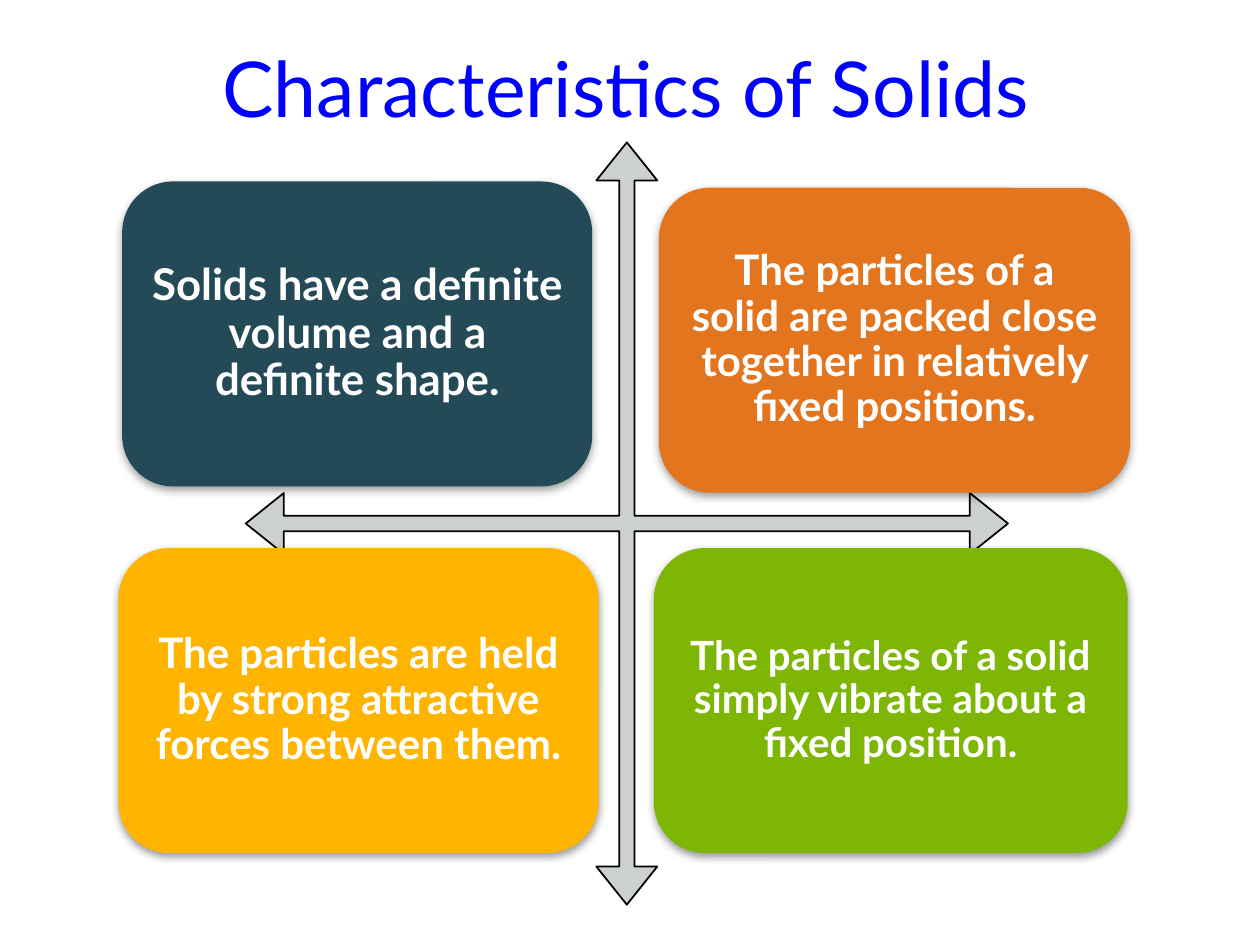
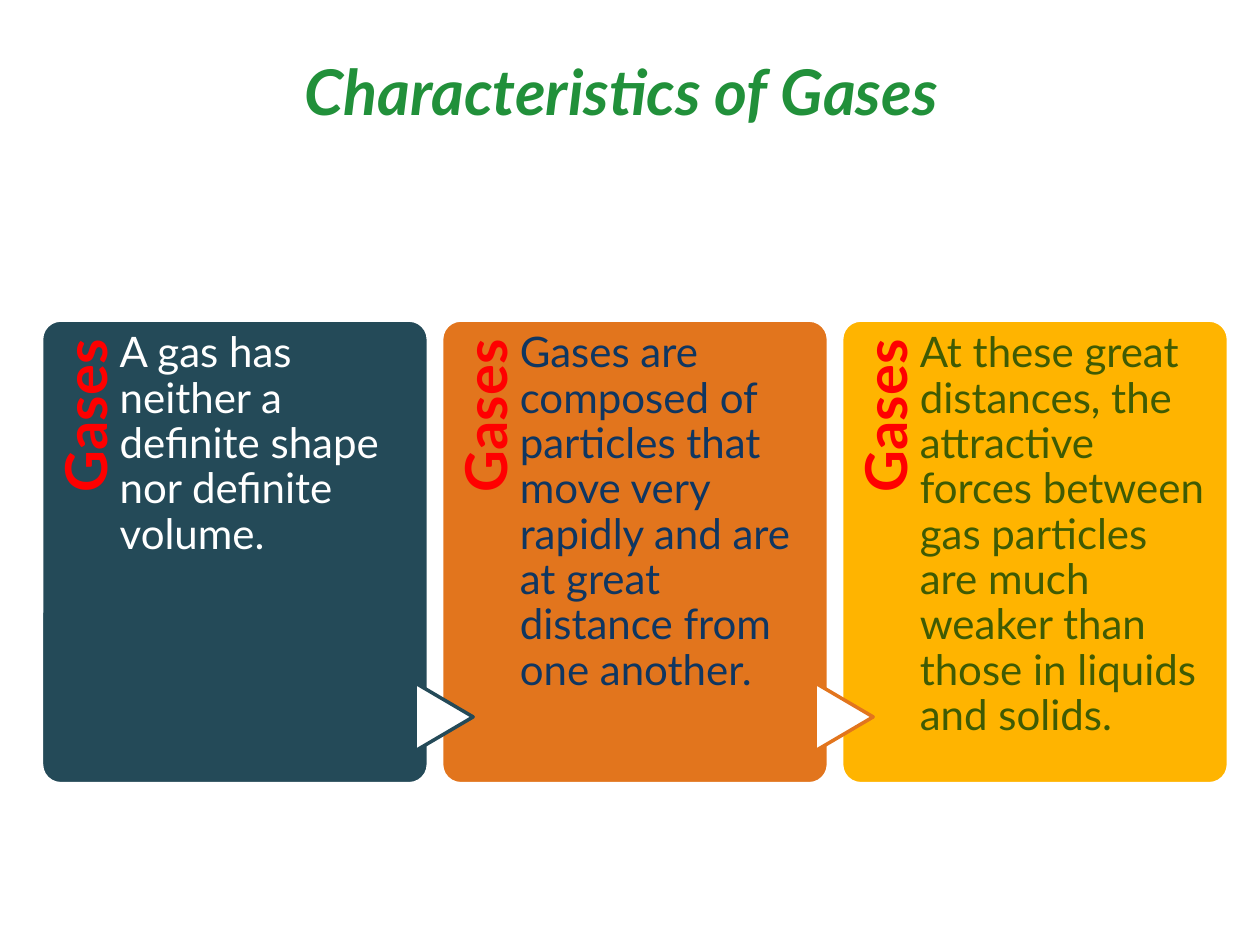
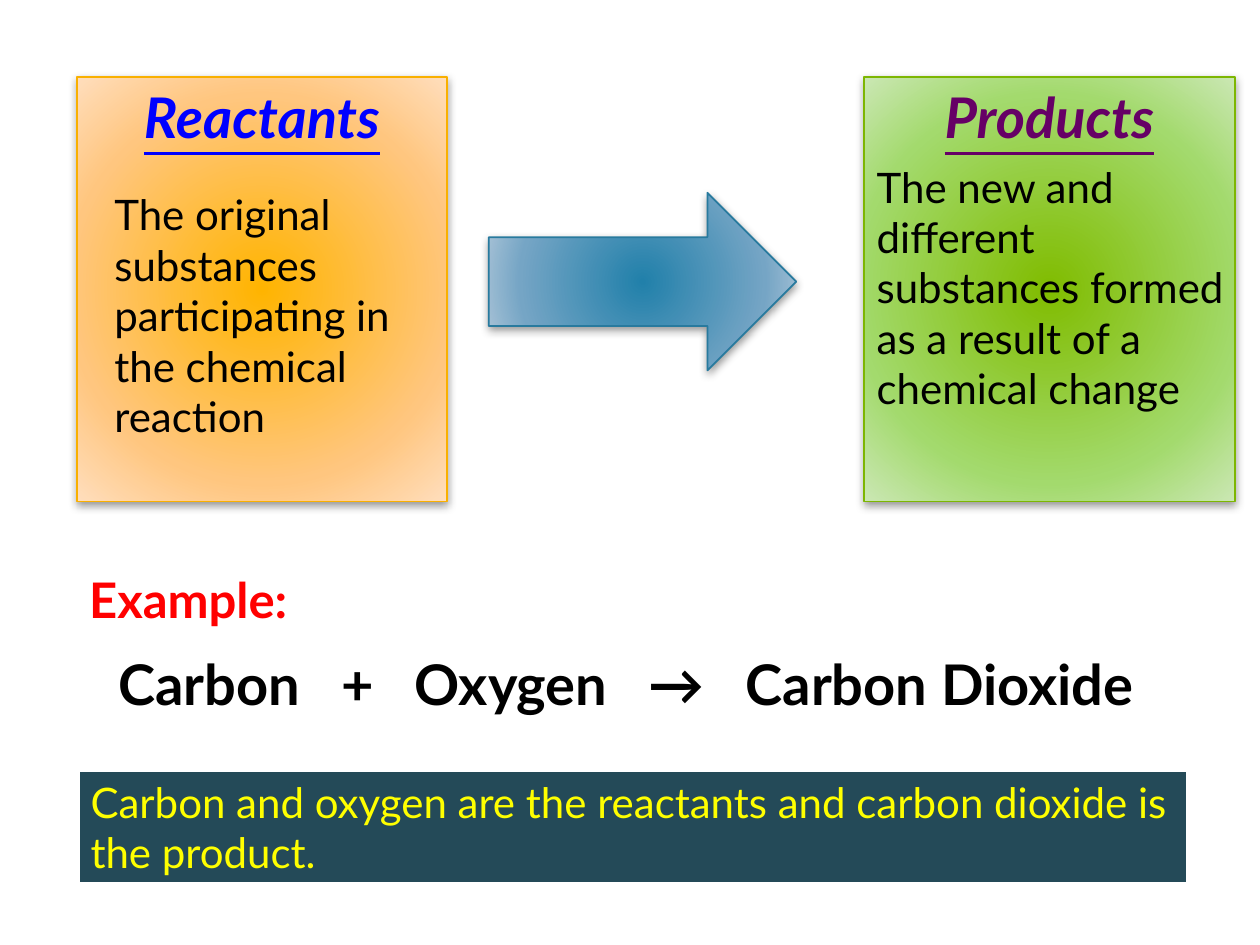
from lxml import etree
from pptx import Presentation
from pptx.dml.color import RGBColor
from pptx.enum.shapes import MSO_SHAPE
from pptx.enum.text import MSO_ANCHOR, PP_ALIGN
from pptx.oxml.ns import qn
from pptx.util import Inches, Pt

LEFT, CENTER, RIGHT = PP_ALIGN.LEFT, PP_ALIGN.CENTER, PP_ALIGN.RIGHT
TOP, MIDDLE = MSO_ANCHOR.TOP, MSO_ANCHOR.MIDDLE
RECTANGLE, ROUNDED = MSO_SHAPE.RECTANGLE, MSO_SHAPE.ROUNDED_RECTANGLE
QUAD_ARROW, RIGHT_ARROW = MSO_SHAPE.QUAD_ARROW, MSO_SHAPE.RIGHT_ARROW
TRIANGLE = MSO_SHAPE.FLOWCHART_EXTRACT

FONT = "Lato"
BLACK = RGBColor(0x00, 0x00, 0x00)
WHITE = RGBColor(0xFF, 0xFF, 0xFF)
RED = RGBColor(0xFF, 0x00, 0x00)
BLUE = RGBColor(0x00, 0x00, 0xFF)
YELLOW = RGBColor(0xFF, 0xFF, 0x00)
PURPLE = RGBColor(0x66, 0x00, 0x66)
TITLE_GREEN = RGBColor(0x21, 0x90, 0x3A)
TEAL = RGBColor(0x24, 0x4A, 0x58)
ORANGE = RGBColor(0xE2, 0x75, 0x1D)
AMBER = RGBColor(0xFF, 0xB4, 0x00)
GREEN = RGBColor(0x7E, 0xB6, 0x06)
GRAY = RGBColor(0xCD, 0xD0, 0xD1)
NAVY = RGBColor(0x0F, 0x36, 0x61)
OLIVE = RGBColor(0x3F, 0x5B, 0x03)
AMBER_EDGE = RGBColor(0xF9, 0xB0, 0x00)
BLUE_EDGE = RGBColor(0x28, 0x7A, 0x9E)
GREEN_EDGE = RGBColor(0x7D, 0xB6, 0x02)
AMBER_GLOW = [AMBER, RGBColor(0xFF, 0xC6, 0x7F), RGBColor(0xFF, 0xDE, 0xBD)]
BLUE_GLOW = [RGBColor(0x21, 0x80, 0xAA), RGBColor(0x75, 0xA5, 0xC5), RGBColor(0xB8, 0xCC, 0xDC)]
GREEN_GLOW = [RGBColor(0x80, 0xBC, 0x00), RGBColor(0xA3, 0xDA, 0x6D), RGBColor(0xCB, 0xE7, 0xB4)]
GLOW_POSITIONS = (0, 69000, 100000)

presentation = Presentation()
presentation.slide_width, presentation.slide_height = Inches(10), Inches(7.5)
blank_layout = presentation.slide_layouts[6]

# Grid of 100 columns and 75 rows; every box is (left, top, width, height) in it
COLUMN = presentation.slide_width / 100
ROW = presentation.slide_height / 75


def add_panel(slide, kind, box, fill, line=None, line_width=1, shadow=False):
    """Add a shape; a list of colours as fill makes a radial gradient."""
    left, top, width, height = box
    shape = slide.shapes.add_shape(kind, round(left * COLUMN), round(top * ROW),
                                   round(width * COLUMN), round(height * ROW))
    properties = shape.element.spPr
    if isinstance(fill, list):
        shape.fill.gradient()
        gradient = properties.find(qn("a:gradFill"))
        for child in list(gradient):
            gradient.remove(child)
        stops = etree.SubElement(gradient, qn("a:gsLst"))
        for position, color in zip(GLOW_POSITIONS, fill):
            stop = etree.SubElement(stops, qn("a:gs"), pos=str(position))
            etree.SubElement(stop, qn("a:srgbClr"), val=str(color))
        circle = etree.SubElement(gradient, qn("a:path"), path="circle")
        etree.SubElement(circle, qn("a:fillToRect"), dict.fromkeys("ltrb", "100000"))
    else:
        shape.fill.solid()
        shape.fill.fore_color.rgb = fill
    if line is None:
        shape.line.fill.background()
    else:
        shape.line.color.rgb = line
        shape.line.width = Pt(line_width)
    shape.shadow.inherit = False
    if shadow:
        outer = etree.SubElement(properties.find(qn("a:effectLst")), qn("a:outerShdw"),
                                 blurRad=str(Pt(5)), dist=str(Pt(2)), dir="5400000", rotWithShape="0")
        black = etree.SubElement(outer, qn("a:srgbClr"), val=str(BLACK))
        etree.SubElement(black, qn("a:alpha"), val="40000")
    return shape


def add_text(slide, box, text, size, color, bold=False, italic=False, underline=False,
             align=LEFT, anchor=TOP, spacing=1.0, insets=(1, 0.5, 1, 0.5), shape=None):
    """Write text in a new text box, or in the given shape."""
    if shape is None:
        left, top, width, height = box
        shape = slide.shapes.add_textbox(round(left * COLUMN), round(top * ROW),
                                         round(width * COLUMN), round(height * ROW))
    frame = shape.text_frame
    frame.text = text
    frame.word_wrap = True
    frame.vertical_anchor = anchor
    frame.margin_left, frame.margin_right = round(insets[0] * COLUMN), round(insets[2] * COLUMN)
    frame.margin_top, frame.margin_bottom = round(insets[1] * ROW), round(insets[3] * ROW)
    paragraph = frame.paragraphs[0]
    paragraph.alignment = align
    paragraph.line_spacing = spacing
    for run in paragraph.runs:
        font = run.font
        font.name, font.size, font.color.rgb = FONT, Pt(size), color
        font.bold, font.italic, font.underline = bold, italic, underline
    return shape


# Slide 1: four characteristics around a cross of arrows
slide = presentation.slides.add_slide(blank_layout)
cross = add_panel(slide, QUAD_ARROW, (19.5, 11.3, 60.5, 60.5), GRAY, BLACK)
for index, value in enumerate((0.02, 0.04, 0.05)):
    cross.adjustments[index] = value
CARD_HEIGHT, CARD_PADDING = 24.2, 1.2
solids = [
    (9.7, 14.4, 37.3, TEAL, 25, "Solids have a definite volume and a definite shape."),
    (52.3, 14.9, 37.4, ORANGE, 24,
     "The particles of a solid are packed close together in relatively fixed positions."),
    (9.4, 43.5, 38.1, AMBER, 24, "The particles are held by strong attractive forces between them."),
    (51.9, 43.5, 37.6, GREEN, 23, "The particles of a solid simply vibrate about a fixed position."),
]
for left, top, width, color, size, text in solids:
    add_panel(slide, ROUNDED, (left, top, width, CARD_HEIGHT), color, shadow=True)
    text_box = (left + CARD_PADDING, top + CARD_PADDING,
                width - 2 * CARD_PADDING, CARD_HEIGHT - 2 * CARD_PADDING)
    add_text(slide, text_box, text, size, WHITE, bold=True, align=CENTER, anchor=MIDDLE,
             spacing=0.9, insets=(1, 1, 1, 1))
add_text(slide, (4.5, 2.7, 90.4, 8.6), "Characteristics of Solids", 44, BLUE, align=CENTER)

# Slide 2: three linked columns
slide = presentation.slides.add_slide(blank_layout)
add_text(slide, (3.3, 3.7, 92, 7.1), "Characteristics of Gases", 36, TITLE_GREEN,
         bold=True, italic=True, align=CENTER)
FIRST_LEFT, STEP, CARD_TOP, CARD_WIDTH, CARD_HEIGHT = 3.3, 31.75, 25.4, 30.7, 36.8
gases = [
    (TEAL, WHITE, "A gas has neither a definite shape nor definite volume."),
    (ORANGE, NAVY, "Gases are composed of particles that move very rapidly and are "
                   "at great distance from one another."),
    (AMBER, OLIVE, "At these great distances, the attractive forces between gas particles "
                   "are much weaker than those in liquids and solids."),
]
for index, (color, text_color, text) in enumerate(gases):
    left = FIRST_LEFT + index * STEP
    card = add_panel(slide, ROUNDED, (left, CARD_TOP, CARD_WIDTH, CARD_HEIGHT), color, WHITE, 2)
    card.adjustments[0] = 0.05
    label = add_text(slide, (left - 12, CARD_TOP + 12, 30.2, 6.1), "Gases", 33, RED, bold=True,
                     align=RIGHT, spacing=0.9, insets=(0, 1.2, 1.6, 0))
    label.rotation = 270
    if index > 0:
        pointer = add_panel(slide, TRIANGLE, (left - 2.5, 54.6, 5.4, 4.6), WHITE,
                            gases[index - 1][0], 2)
        pointer.rotation = 90
    add_text(slide, (left + 6.2, CARD_TOP, 22.9, CARD_HEIGHT), text, 24, text_color,
             spacing=0.9, insets=(0, 0.9, 0, 0))

# Slide 3: reactants become products
slide = presentation.slides.add_slide(blank_layout)
REACTANTS_LEFT, PRODUCTS_LEFT, CARD_TOP, CARD_WIDTH, CARD_HEIGHT = 6.1, 68.6, 6.1, 29.4, 33.7
add_panel(slide, RECTANGLE, (REACTANTS_LEFT, CARD_TOP, CARD_WIDTH, CARD_HEIGHT),
          AMBER_GLOW, AMBER_EDGE, shadow=True)
add_panel(slide, RIGHT_ARROW, (38.8, 15.3, 24.4, 14.1), BLUE_GLOW, BLUE_EDGE, shadow=True)
add_panel(slide, RECTANGLE, (PRODUCTS_LEFT, CARD_TOP, CARD_WIDTH, CARD_HEIGHT),
          GREEN_GLOW, GREEN_EDGE, shadow=True)
for left, heading, color in ((REACTANTS_LEFT, "Reactants", BLUE), (PRODUCTS_LEFT, "Products", PURPLE)):
    add_text(slide, (left, CARD_TOP, CARD_WIDTH, 6.4), heading, 32, color,
             bold=True, italic=True, underline=True, align=CENTER)
add_text(slide, (8.1, 14.5, 27.3, 21.2),
         "The original substances participating in the chemical reaction", 24, BLACK)
add_text(slide, (PRODUCTS_LEFT, 12.3, 30.3, 29.3),
         "The new and different substances formed as a result of a chemical change", 24, BLACK)

# Example equation, spaced by tab stops
add_text(slide, (REACTANTS_LEFT, 44.7, 29.5, 5.7), "Example:", 28, RED, bold=True)
equation = add_text(slide, (8.4, 51.1, 90, 6.4), "Carbon\t+\tOxygen\t→\tCarbon Dioxide",
                    32, BLACK, bold=True)
paragraph_properties = equation.text_frame.paragraphs[0]._p.get_or_add_pPr()
tab_list = etree.SubElement(paragraph_properties, qn("a:tabLst"))
for position in (17.7, 23.5, 42.1, 49.8):
    etree.SubElement(tab_list, qn("a:tab"), pos=str(round(position * COLUMN)), algn="l")

# Conclusion band
band = add_panel(slide, RECTANGLE, (6.2, 61.1, 88.1, 9.1), TEAL, WHITE, 2.5)
add_text(slide, None, "Carbon and oxygen are the reactants and carbon dioxide is the product.",
         24, YELLOW, shape=band)

presentation.save("out.pptx")
